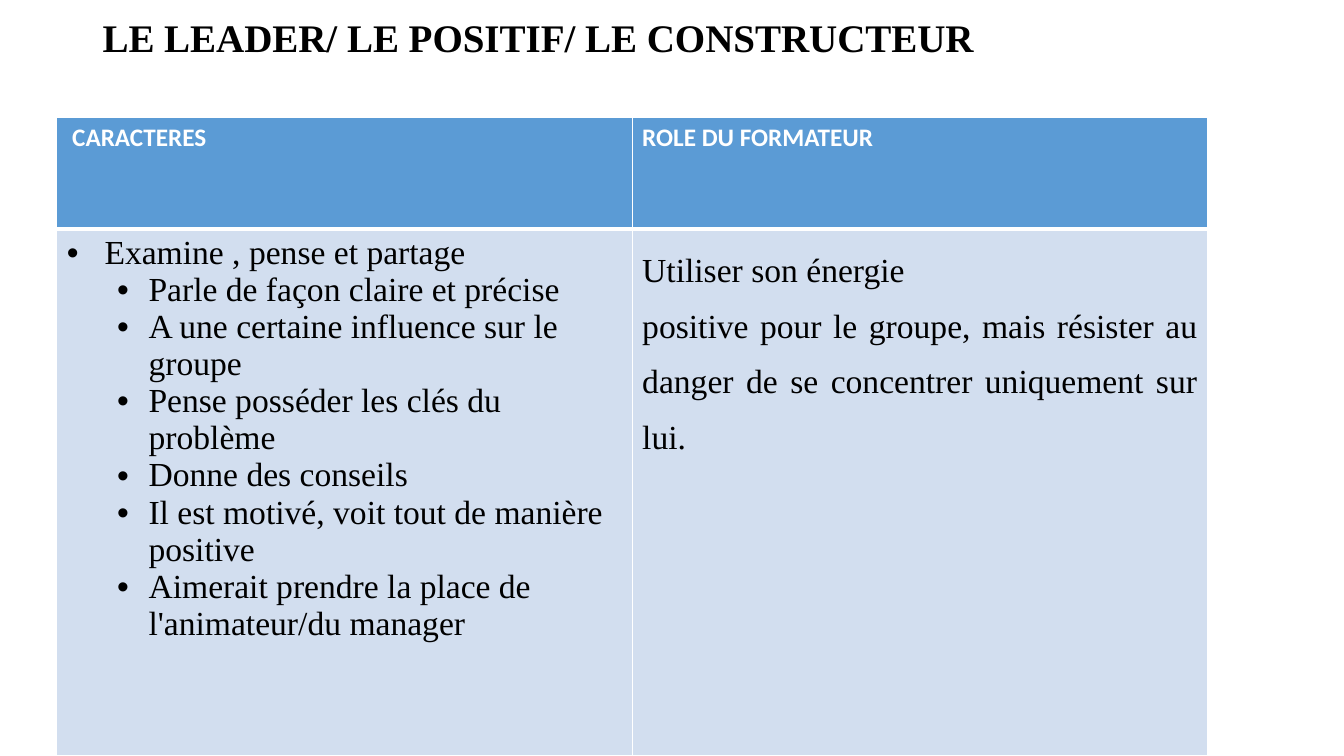
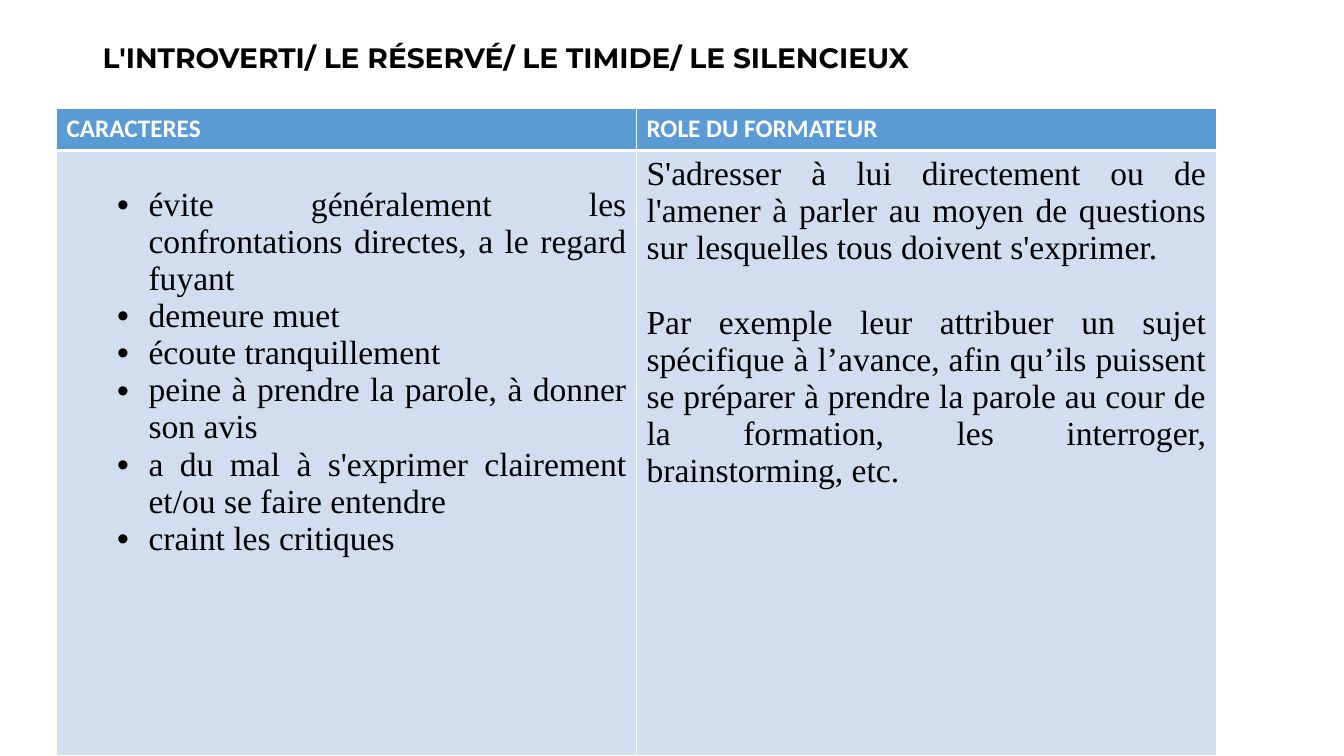
import pptx
import pptx.util
import pptx.dml.color
import pptx.enum.text
import pptx.oxml
import pptx.oxml.ns
from dataclasses import dataclass

Cm = pptx.util.Cm
Pt = pptx.util.Pt
RGB = pptx.dml.color.RGBColor
ALIGN = pptx.enum.text.PP_ALIGN


@dataclass(frozen=True)
class Theme:
    ink: RGB = RGB(0x00, 0x00, 0x00)
    white: RGB = RGB(0xFF, 0xFF, 0xFF)
    header_fill: RGB = RGB(0x5B, 0x9B, 0xD5)
    body_fill: RGB = RGB(0xD2, 0xDE, 0xEF)
    header_font: str = "Calibri"
    body_font: str = "Times New Roman"
    header_size: float = 18
    body_size: float = 24
    thin: float = 1
    thick: float = 3


theme = Theme()
BULLET_INDENTS = {0: (0.95, -0.95), 1: (2.06, -0.79)}  # level: margin, hanging


def style_cell(cell, fill, widths):
    """Fill a cell and give its left, right, top and bottom borders in white."""
    cell.fill.solid()
    cell.fill.fore_color.rgb = fill
    properties = cell._tc.get_or_add_tcPr()
    for position, (side, width) in enumerate(zip("LRTB", widths)):
        properties.insert(position, pptx.oxml.parse_xml(
            f'<a:ln{side} {pptx.oxml.ns.nsdecls("a")} w="{Pt(width)}">'
            f'<a:solidFill><a:srgbClr val="{theme.white}"/></a:solidFill></a:ln{side}>'))


def write_paragraph(frame, index, text, font, size, color, bold=False,
                    align=ALIGN.LEFT, spacing=1.0, before=0, level=None):
    """Write one paragraph; a level makes it a bullet."""
    paragraph = frame.paragraphs[0] if index == 0 else frame.add_paragraph()
    if level is not None:
        paragraph.level = level
        margin, hanging = BULLET_INDENTS[level]
        properties = paragraph._p.get_or_add_pPr()
        properties.set("marL", str(Cm(margin)))
        properties.set("indent", str(Cm(hanging)))
        for bullet in ('buFont {} typeface="Arial"', 'buChar {} char="•"'):
            properties.append(pptx.oxml.parse_xml(
                f'<a:{bullet.format(pptx.oxml.ns.nsdecls("a"))}/>'))
    paragraph.alignment = align
    paragraph.line_spacing = spacing
    if index and before:
        paragraph.space_before = Pt(before)
    run = paragraph.add_run()
    run.text = text
    run.font.name = font
    run.font.size = Pt(size)
    run.font.bold = bold
    run.font.color.rgb = color


# Content: traits are (level, text); lengths are in centimetres
profiles = [
    dict(
        title="LE LEADER/ LE POSITIF/ LE CONSTRUCTEUR",
        title_font="Times New Roman", title_size=27.9, title_top=0.25,
        table_top=2.95, column=14.5, header_height=2.82,
        header_left=0.39, traits_top=0.13, traits_align=ALIGN.LEFT,
        traits=[
            (0, "Examine , pense et partage"),
            (1, "Parle de façon claire et précise"),
            (1, "A une certaine influence sur le groupe"),
            (1, "Pense posséder les clés du problème"),
            (1, "Donne des conseils"),
            (1, "Il est motivé, voit tout de manière positive"),
            (1, "Aimerait prendre la place de l'animateur/du manager"),
        ],
        role_spacing=1.5, role_gap=0,
        role=[
            "Utiliser son énergie",
            "positive pour le groupe, mais résister au danger de se concentrer "
            "uniquement sur lui.",
        ],
    ),
    dict(
        title="L'INTROVERTI/ LE RÉSERVÉ/ LE TIMIDE/ LE SILENCIEUX",
        title_font="Montserrat", title_size=20, title_top=0.74,
        table_top=2.73, column=14.61, header_height=1.06,
        header_left=0.25, traits_top=0.9, traits_align=ALIGN.JUSTIFY,
        traits=[
            (1, "évite généralement les confrontations directes, a le regard fuyant"),
            (1, "demeure muet"),
            (1, "écoute tranquillement"),
            (1, "peine à prendre la parole, à donner son avis"),
            (1, "a du mal à s'exprimer clairement et/ou se faire entendre"),
            (1, "craint les critiques"),
        ],
        role_spacing=1.0, role_gap=26.6,
        role=[
            "S'adresser à lui directement ou de l'amener à parler au moyen de "
            "questions sur lesquelles tous doivent s'exprimer.",
            "Par exemple leur attribuer un sujet spécifique à l’avance, afin qu’ils "
            "puissent se préparer à prendre la parole au cour de la formation, les "
            "interroger, brainstorming, etc.",
        ],
    ),
]

deck = pptx.Presentation()
deck.slide_width = Cm(33.87)
deck.slide_height = Cm(19.05)

for profile in profiles:
    slide = deck.slides.add_slide(deck.slide_layouts[5])

    # Title
    title = slide.shapes.title
    title.left, title.top = Cm(2.33), Cm(profile["title_top"])
    title.width, title.height = Cm(29.21), Cm(1.5)
    heading = title.text_frame
    heading.word_wrap = True
    heading.auto_size = pptx.enum.text.MSO_AUTO_SIZE.NONE
    heading.vertical_anchor = pptx.enum.text.MSO_ANCHOR.MIDDLE
    write_paragraph(heading, 0, profile["title"], profile["title_font"],
                    profile["title_size"], theme.ink, bold=True, spacing=0.9)

    # Table, reaching down to the slide's bottom edge
    top, header_height = Cm(profile["table_top"]), Cm(profile["header_height"])
    column = Cm(profile["column"])
    table = slide.shapes.add_table(
        2, 2, Cm(1.43), top, 2 * column, deck.slide_height - top).table
    for table_column in table.columns:
        table_column.width = column
    table.rows[0].height = header_height
    table.rows[1].height = deck.slide_height - top - header_height

    # Header row
    for index, label in enumerate(["CARACTERES", "ROLE DU FORMATEUR"]):
        header = table.cell(0, index)
        style_cell(header, theme.header_fill,
                   (theme.thin, theme.thin, theme.thin, theme.thick))
        style_cell(table.cell(1, index), theme.body_fill,
                   (theme.thin, theme.thin, theme.thick, theme.thin))
        write_paragraph(header.text_frame, 0, label, theme.header_font,
                        theme.header_size, theme.white, bold=True)
    table.cell(0, 0).margin_left = Cm(profile["header_left"])

    # Traits
    traits = table.cell(1, 0)
    traits.margin_top = Cm(profile["traits_top"])
    for index, (level, trait) in enumerate(profile["traits"]):
        write_paragraph(traits.text_frame, index, trait, theme.body_font,
                        theme.body_size, theme.ink,
                        align=profile["traits_align"], level=level)

    # Trainer's role
    role = table.cell(1, 1).text_frame
    for index, advice in enumerate(profile["role"]):
        write_paragraph(role, index, advice, theme.body_font, theme.body_size,
                        theme.ink, align=ALIGN.JUSTIFY,
                        spacing=profile["role_spacing"], before=profile["role_gap"])

deck.save("out.pptx")
